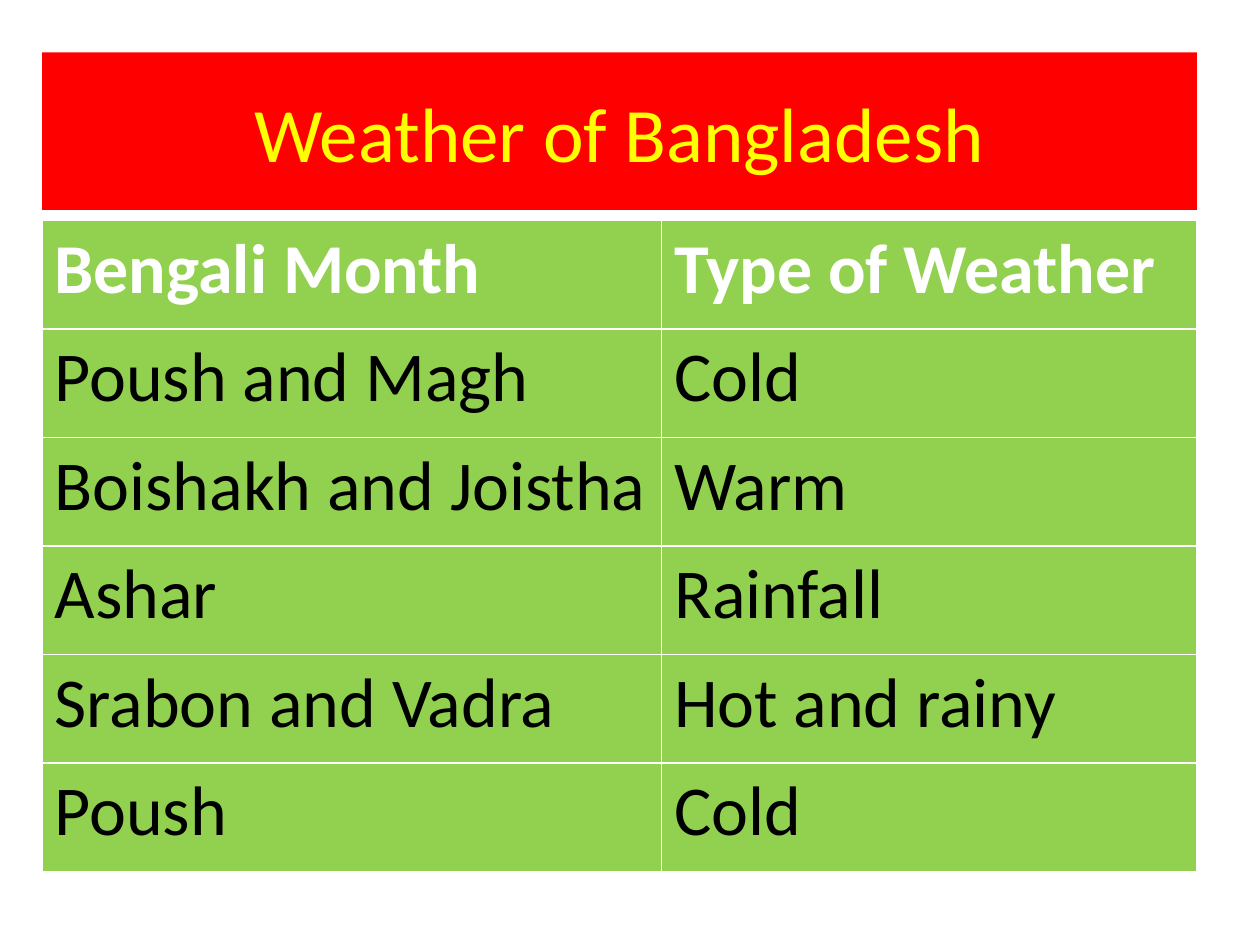
from pptx import Presentation
from pptx.dml.color import RGBColor
from pptx.enum.text import MSO_ANCHOR, PP_ALIGN
from pptx.util import Pt

LEFT, WIDTH = 24, 660
COLUMN_WIDTHS = (354, 306)
ROW_HEIGHT = 62
WEATHER_ROWS = [
    ("Bengali Month", "Type of Weather"),
    ("Poush and Magh", "Cold"),
    ("Boishakh and Joistha", "Warm"),
    ("Ashar", "Rainfall"),
    ("Srabon and Vadra", "Hot and rainy"),
    ("Poush", "Cold"),
]


def color(hex_value):
    return RGBColor.from_string(hex_value)


class SlideBuilder:
    font_name = "Calibri"
    title_fill, title_color = "FF0000", "FFFF00"
    cell_fill, header_color, body_color = "92D050", "FFFFFF", "000000"

    def __init__(self, slide):
        self.slide = slide

    def fill(self, target, hex_value):
        target.fill.solid()
        target.fill.fore_color.rgb = color(hex_value)

    def add_text(self, text_frame, text, size, hex_value, bold=False):
        paragraph = text_frame.paragraphs[0]
        run = paragraph.add_run()
        run.text = text
        font_format = {"name": self.font_name, "size": Pt(size), "bold": bold}
        for name, value in font_format.items():
            setattr(run.font, name, value)
        run.font.color.rgb = color(hex_value)
        return paragraph

    def title(self, text, top, height):
        shape = self.slide.shapes.title
        box = {"left": LEFT, "top": top, "width": WIDTH, "height": height}
        for name, value in box.items():
            setattr(shape, name, Pt(value))
        self.fill(shape, self.title_fill)
        shape.text_frame.vertical_anchor = MSO_ANCHOR.MIDDLE
        paragraph = self.add_text(shape.text_frame, text, 44, self.title_color)
        paragraph.alignment = PP_ALIGN.CENTER

    def table(self, rows, top):
        """Add a table; the default table style supplies its white borders."""
        table = self.slide.shapes.add_table(
            len(rows), len(COLUMN_WIDTHS), Pt(LEFT), Pt(top),
            Pt(WIDTH), Pt(ROW_HEIGHT * len(rows))).table
        for column, width in zip(table.columns, COLUMN_WIDTHS):
            column.width = Pt(width)
        for row_index, texts in enumerate(rows):
            is_header = row_index == 0
            text_color = self.header_color if is_header else self.body_color
            for column_index, text in enumerate(texts):
                cell = table.cell(row_index, column_index)
                self.fill(cell, self.cell_fill)
                self.add_text(cell.text_frame, text, 40, text_color, is_header)


def main():
    presentation = Presentation()
    presentation.slide_width, presentation.slide_height = Pt(720), Pt(540)
    title_only = presentation.slide_layouts[5]
    builder = SlideBuilder(presentation.slides.add_slide(title_only))
    builder.title("Weather of Bangladesh", top=30, height=90)
    builder.table(WEATHER_ROWS, top=126)
    presentation.save("out.pptx")


if __name__ == "__main__":
    main()
